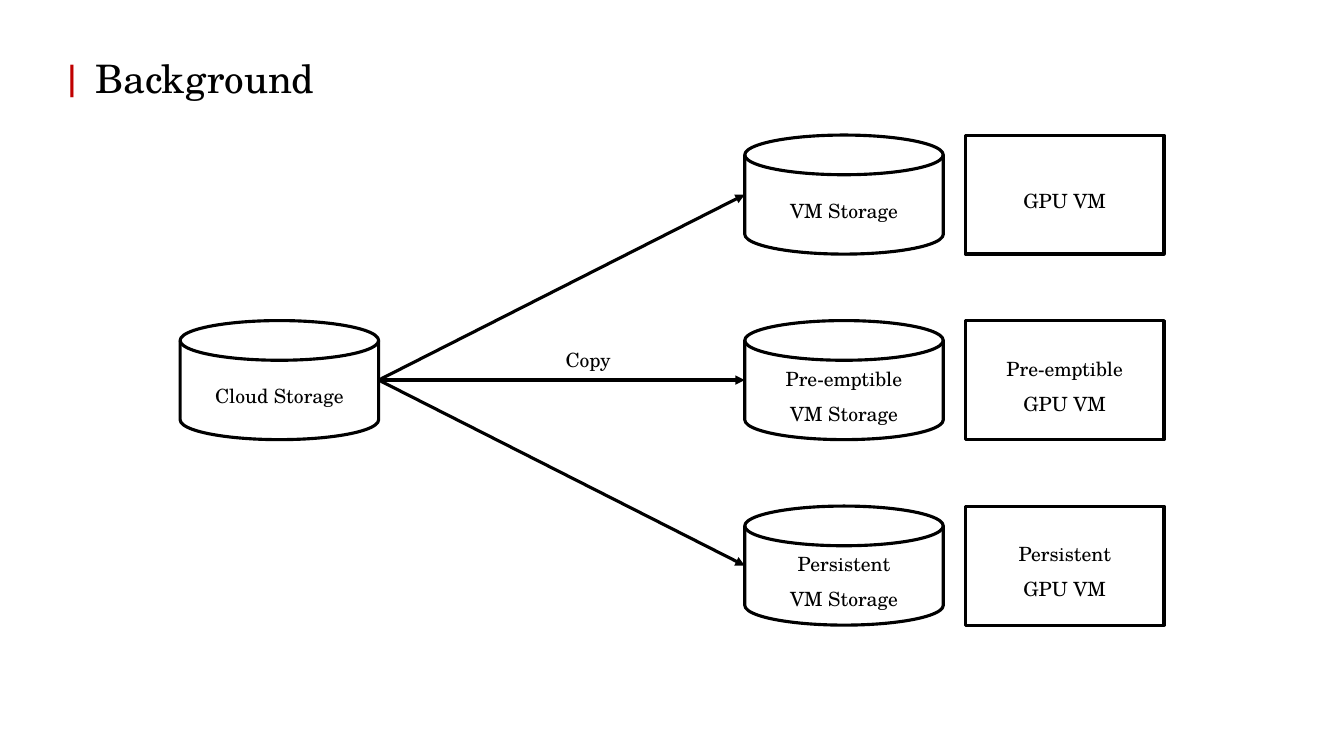
from lxml.etree import SubElement
from pptx import Presentation
from pptx.dml.color import RGBColor
from pptx.enum.shapes import MSO_CONNECTOR, MSO_SHAPE
from pptx.enum.text import MSO_ANCHOR, MSO_AUTO_SIZE, PP_ALIGN
from pptx.oxml.ns import qn
from pptx.util import Pt

BLACK = RGBColor(0x00, 0x00, 0x00)
WHITE = RGBColor(0xFF, 0xFF, 0xFF)
RED = RGBColor(0xC0, 0x00, 0x00)

NODE_WIDTH, NODE_HEIGHT = 141.8, 85
FIRST_ROW_TOP, ROW_PITCH = 96.5, 132.5
CLOUD_LEFT, STORAGE_LEFT, MACHINE_LEFT = 128.7, 532, 689.7
VM_KINDS = ["", "Pre-emptible", "Persistent"]


def add_run(paragraph, text, size=14, color=BLACK, font="TeX Gyre Schola"):
    run = paragraph.add_run()
    run.text = text
    run.font.name = font
    run.font.size = Pt(size)
    run.font.color.rgb = color


class DiagramSlide:
    line_width = 2.25
    line_spacing = 1.5

    def __init__(self, presentation):
        self.slide = presentation.slides.add_slide(presentation.slide_layouts[5])

    def title(self, text, left, top, width, height):
        shape = self.slide.shapes.title
        shape.left, shape.top = Pt(left), Pt(top)
        shape.width, shape.height = Pt(width), Pt(height)
        frame = shape.text_frame
        frame.auto_size = MSO_AUTO_SIZE.NONE
        frame.vertical_anchor = MSO_ANCHOR.MIDDLE
        paragraph = frame.paragraphs[0]
        paragraph.alignment = PP_ALIGN.LEFT
        add_run(paragraph, "|", size=28, color=RED)
        add_run(paragraph, " " + text, size=28)

    def centred_lines(self, shape, lines):
        frame = shape.text_frame
        frame.word_wrap = True
        frame.vertical_anchor = MSO_ANCHOR.MIDDLE
        for index, line in enumerate(lines):
            paragraph = frame.add_paragraph() if index else frame.paragraphs[0]
            paragraph.alignment = PP_ALIGN.CENTER
            paragraph.line_spacing = self.line_spacing
            add_run(paragraph, line)

    def node(self, kind, left, top, lines):
        shape = self.slide.shapes.add_shape(
            kind, Pt(left), Pt(top), Pt(NODE_WIDTH), Pt(NODE_HEIGHT))
        shape.shadow.inherit = False
        shape.fill.solid()
        shape.fill.fore_color.rgb = WHITE
        shape.line.color.rgb = BLACK
        shape.line.width = Pt(self.line_width)
        self.centred_lines(shape, lines)

    def label(self, text, left, top, width, height):
        box = self.slide.shapes.add_textbox(Pt(left), Pt(top), Pt(width), Pt(height))
        self.centred_lines(box, [text])

    def arrow(self, start, end):
        connector = self.slide.shapes.add_connector(
            MSO_CONNECTOR.STRAIGHT, *map(Pt, start + end))
        connector.line.color.rgb = BLACK
        connector.line.width = Pt(self.line_width)
        SubElement(connector.line._get_or_add_ln(), qn("a:tailEnd"), type="triangle")
        SubElement(connector._element.spPr, qn("a:effectLst"))


def main():
    presentation = Presentation()
    presentation.slide_width, presentation.slide_height = Pt(960), Pt(540)
    diagram = DiagramSlide(presentation)
    diagram.title("Background", 36, 35.3, 305.3, 41)

    cloud_top = FIRST_ROW_TOP + ROW_PITCH
    diagram.node(MSO_SHAPE.FLOWCHART_MAGNETIC_DISK, CLOUD_LEFT, cloud_top, ["Cloud Storage"])
    cloud_exit = (CLOUD_LEFT + NODE_WIDTH, cloud_top + NODE_HEIGHT / 2)

    for row, vm_kind in enumerate(VM_KINDS):
        top = FIRST_ROW_TOP + row * ROW_PITCH
        prefix = [vm_kind] if vm_kind else []
        diagram.node(MSO_SHAPE.FLOWCHART_MAGNETIC_DISK, STORAGE_LEFT, top, prefix + ["VM Storage"])
        diagram.node(MSO_SHAPE.RECTANGLE, MACHINE_LEFT, top, prefix + ["GPU VM"])
        diagram.arrow(cloud_exit, (STORAGE_LEFT, top + NODE_HEIGHT / 2))

    diagram.label("Copy", 349.2, 237.6, NODE_WIDTH, 29.5)
    presentation.save("out.pptx")


if __name__ == "__main__":
    main()
